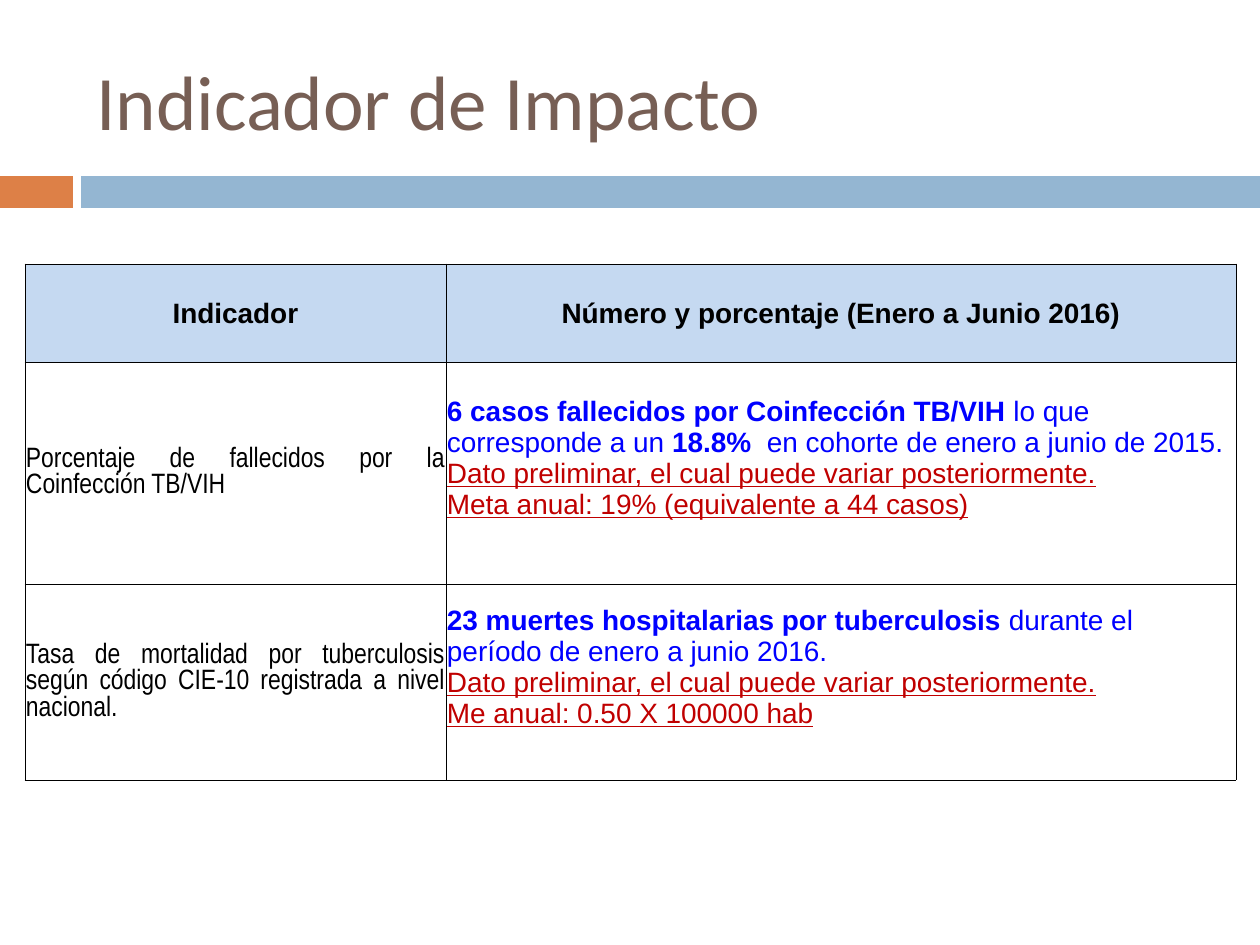
from dataclasses import dataclass

from lxml.etree import SubElement
from pptx import Presentation
from pptx.dml.color import RGBColor as Rgb
from pptx.enum.shapes import MSO_SHAPE as Shape
from pptx.enum.text import MSO_ANCHOR as Anchor, PP_ALIGN as Align
from pptx.oxml.ns import qn
from pptx.util import Pt

PX = 914400 / 126


@dataclass(frozen=True)
class Theme:
    title: str = "775F55"
    accent: str = "DD8047"
    band: str = "94B6D2"
    header: str = "C5D9F1"
    text: str = "000000"
    finding: str = "0000FF"
    warning: str = "C00000"
    title_size: int = 44
    table_size: int = 16
    border: float = 0.5


THEME = Theme()

HEADER = dict(name="Arial", color=THEME.text, bold=True)
LABEL = dict(name="Arial Narrow", color=THEME.text, bold=False)
FINDING = dict(name="Arial", color=THEME.finding, bold=False)
KEY = FINDING | dict(bold=True)
WARNING = FINDING | dict(color=THEME.warning, underline=True)

PRELIMINARY = ("Dato preliminar, el cual puede variar posteriormente.", WARNING)
HEADINGS = ["Indicador", "Número y porcentaje (Enero a Junio 2016)"]
# Each indicator: its label, then the paragraphs of its result.
INDICATORS = [
    ("Porcentaje de fallecidos por la Coinfección TB/VIH",
     [[("6 casos fallecidos por Coinfección TB/VIH ", KEY),
       ("lo que corresponde a un ", FINDING),
       ("18.8%  ", KEY),
       ("en cohorte de enero a junio de 2015.\n", FINDING),
       PRELIMINARY],
      [("Meta anual: 19% (equivalente a 44 casos)", WARNING)]]),
    ("Tasa de mortalidad por tuberculosis según código CIE-10 "
     "registrada a nivel nacional.",
     [[("23 muertes hospitalarias por tuberculosis ", KEY),
       ("durante el período de enero a junio 2016.\n", FINDING),
       PRELIMINARY],
      [("Me anual: 0.50 X 100000 hab", WARNING)]]),
]


def px(length):
    return round(length * PX)


def set_attributes(target, values):
    for key, value in values.items():
        setattr(target, key, value)


def add_run(paragraph, text, style, size):
    """Add one run; a closing newline becomes a line break."""
    run = paragraph.add_run()
    run.text = text.rstrip("\n")
    values = dict(style)
    run.font.color.rgb = Rgb.from_string(values.pop("color"))
    set_attributes(run.font, values | dict(size=Pt(size)))
    if text.endswith("\n"):
        paragraph.add_line_break()


def write_paragraphs(frame, paragraphs, align, size):
    for index, runs in enumerate(paragraphs):
        paragraph = frame.add_paragraph() if index else frame.paragraphs[0]
        paragraph.alignment = align
        for text, style in runs:
            add_run(paragraph, text, style, size)


def add_title(slide, left, top, width, height):
    frame = slide.shapes.add_textbox(*map(px, (left, top, width, height))).text_frame
    set_attributes(frame, dict(word_wrap=True, vertical_anchor=Anchor.MIDDLE))
    style = dict(name="Calibri", color=THEME.title)
    write_paragraphs(frame, [[("Indicador de Impacto", style)]],
                     Align.LEFT, THEME.title_size)


def add_divider(slide, left, top, width, height):
    accent_width, gap = 73, 8
    band_left = accent_width + gap
    for offset, part_width, color in ((0, accent_width, THEME.accent),
                                      (band_left, width - band_left, THEME.band)):
        bar = slide.shapes.add_shape(
            Shape.RECTANGLE, *map(px, (left + offset, top, part_width, height)))
        bar.shadow.inherit = False
        bar.fill.solid()
        bar.fill.fore_color.rgb = Rgb.from_string(color)
        bar.line.fill.background()


def add_borders(cell):
    properties = cell._tc.get_or_add_tcPr()
    for side in ("lnL", "lnR", "lnT", "lnB"):
        line = SubElement(properties, qn(f"a:{side}"), w=str(Pt(THEME.border)))
        fill = SubElement(line, qn("a:solidFill"))
        SubElement(fill, qn("a:srgbClr"), val=THEME.text)


def fill_cell(cell, paragraphs, align, color=None, bottom=0):
    add_borders(cell)
    if color:
        cell.fill.solid()
        cell.fill.fore_color.rgb = Rgb.from_string(color)
    else:
        cell.fill.background()
    set_attributes(cell, dict(
        vertical_anchor=Anchor.MIDDLE, margin_left=px(1), margin_right=px(1),
        margin_top=px(1), margin_bottom=px(bottom)))
    write_paragraphs(cell.text_frame, paragraphs, align, THEME.table_size)


def add_indicator_table(slide, left, top, width, height):
    label_width, header_height, first_height = 421, 98, 222
    column_widths = (label_width, width - label_width)
    row_heights = (header_height, first_height,
                   height - header_height - first_height)
    table = slide.shapes.add_table(
        len(row_heights), len(column_widths),
        *map(px, (left, top, width, height))).table
    set_attributes(table, dict(first_row=False, horz_banding=False))
    for column, column_width in zip(table.columns, column_widths):
        column.width = px(column_width)
    for row, row_height in zip(table.rows, row_heights):
        row.height = px(row_height)

    for column, heading in enumerate(HEADINGS):
        fill_cell(table.cell(0, column), [[(heading, HEADER)]],
                  Align.CENTER, THEME.header)
    for row, (label, result) in enumerate(INDICATORS, start=1):
        fill_cell(table.cell(row, 0), [[(label, LABEL)]], Align.JUSTIFY)
        fill_cell(table.cell(row, 1), result, Align.LEFT, bottom=31)


def main():
    deck = Presentation()
    set_attributes(deck, dict(slide_width=px(1260), slide_height=px(945)))
    slide = deck.slides.add_slide(deck.slide_layouts[6])
    add_divider(slide, 0, 176, 1260, 32)
    add_title(slide, 84, 32, 1124, 136)
    add_indicator_table(slide, 25, 264, 1211, 516)
    deck.save("out.pptx")


if __name__ == "__main__":
    main()
